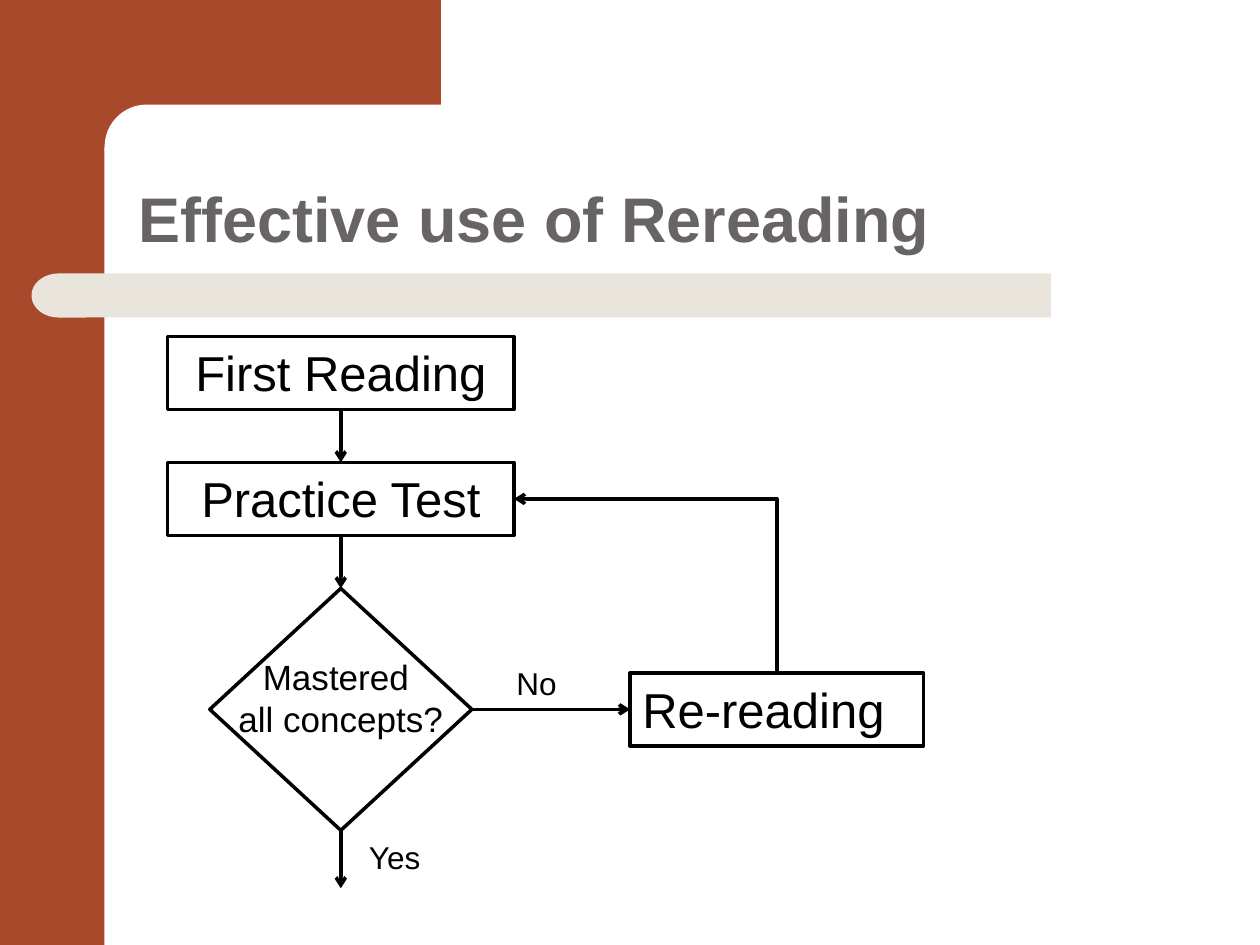
from lxml import etree
from pptx import Presentation
from pptx.dml.color import RGBColor
from pptx.enum.shapes import MSO_CONNECTOR as LINE, MSO_SHAPE as SHAPE
from pptx.enum.text import MSO_ANCHOR as ANCHOR, MSO_AUTO_SIZE as FIT, PP_ALIGN as ALIGN
from pptx.oxml.ns import qn
from pptx.util import Inches, Pt

COLORS = {"rust": "A8492B", "sand": "E9E5DC", "paper": "FFFFFF", "title": "696464", "ink": "000000"}
TOP, BOTTOM, LEFT, RIGHT = 0, 2, 1, 3


def color(name):
    """Return the named colour."""
    return RGBColor.from_string(COLORS[name])


def write(frame, text, size, ink="ink", bold=False, **paragraph_format):
    """Fill a text frame, one paragraph a line, in one format."""
    frame.text = text
    for paragraph in frame.paragraphs:
        for name, value in paragraph_format.items():
            setattr(paragraph, name, value)
        font = paragraph.font
        for name, value in {"name": "Arial", "size": Pt(size), "bold": bold}.items():
            setattr(font, name, value)
        font.color.rgb = color(ink)


def add_block(slide, kind, box, fill):
    """Add a plain filled shape without outline."""
    shape = slide.shapes.add_shape(kind, *map(Inches, box))
    shape.shadow.inherit = False
    shape.fill.solid()
    shape.fill.fore_color.rgb = color(fill)
    shape.line.fill.background()
    return shape


def add_backdrop(slide, width, height):
    """Place the rust corner frame and the sand bar."""
    band, corner = 0.83, 1.17
    add_block(slide, SHAPE.RECTANGLE, (0, 0, band, height), "rust")
    add_block(slide, SHAPE.RECTANGLE, (0.75, 0, 2.75, corner), "rust")
    curve = add_block(slide, SHAPE.ROUNDED_RECTANGLE, (band, band, 5.58, 0.67), "paper")
    curve.adjustments[0] = 0.5
    bar_top, bar_height, bar_left = 2.17, 0.35, 0.67
    add_block(slide, SHAPE.RECTANGLE, (bar_left, bar_top, width - 1.66 - bar_left, bar_height), "sand")
    cap = add_block(slide, SHAPE.FLOWCHART_DELAY, (0.25, bar_top, 0.43, bar_height), "sand")
    cap.rotation = 180


def add_title(slide, box, text):
    """Move the title placeholder into its box, above the backdrop."""
    title = slide.shapes.title
    title.left, title.top, title.width, title.height = map(Inches, box)
    frame = title.text_frame
    frame.vertical_anchor, frame.auto_size = ANCHOR.BOTTOM, FIT.NONE
    write(frame, text, 36, "title", True, alignment=ALIGN.LEFT, line_spacing=0.9)
    slide.shapes._spTree.append(title.element)


def add_step(slide, kind, box, text, size, **paragraph_format):
    """Add an outlined flowchart step with its text."""
    shape = slide.shapes.add_shape(kind, *map(Inches, box))
    shape.shadow.inherit = False
    shape.fill.background()
    shape.line.color.rgb = color("ink")
    shape.line.width = Pt(2)
    frame = shape.text_frame
    frame.word_wrap, frame.vertical_anchor = False, ANCHOR.TOP
    write(frame, text, size, **paragraph_format)
    return shape


def add_label(slide, box, text):
    """Add a branch label."""
    frame = slide.shapes.add_textbox(*map(Inches, box)).text_frame
    frame.word_wrap, frame.auto_size = False, FIT.SHAPE_TO_FIT_TEXT
    write(frame, text, 18)


def add_arrow(slide, start, end, kind=LINE.STRAIGHT):
    """Add a black connector with an open arrowhead at its end."""
    arrow = slide.shapes.add_connector(kind, *start, *end)
    arrow.line.color.rgb = color("ink")
    arrow.line.width = Pt(2)
    properties = arrow.element.spPr
    etree.SubElement(properties.find(qn("a:ln")), qn("a:tailEnd"), type="arrow")
    etree.SubElement(properties, qn("a:effectLst"))
    return arrow


def link(slide, source, source_site, target, target_site):
    """Join two steps with a straight glued arrow."""
    arrow = add_arrow(slide, (0, 0), (0, 0))
    arrow.begin_connect(source, source_site)
    arrow.end_connect(target, target_site)


def add_return_arrow(slide, source, target):
    """Run an arrow up from the top of one step and left into another."""
    start = source.left + source.width // 2, source.top
    end = target.left + target.width, target.top + target.height // 2
    arrow = add_arrow(slide, start, end, LINE.ELBOW)
    run, rise = start[0] - end[0], start[1] - end[1]
    place = {"left": (start[0] + end[0] - rise) // 2, "top": (start[1] + end[1] - run) // 2,
             "width": rise, "height": run}
    for name, value in place.items():
        setattr(arrow, name, value)
    properties = arrow.element.spPr
    properties.find(qn("a:prstGeom")).set("prst", "bentConnector2")
    frame = properties.find(qn("a:xfrm"))
    for name in ("flipH", "flipV"):
        frame.attrib.pop(name, None)
    frame.set("rot", str(270 * 60000))
    frame.set("flipV", "1")


def add_flowchart(slide, left, top):
    """Place the reading loop with its top left corner at the given point."""
    width, height, pitch = 2.75, 0.58, 1
    middle = left + width / 2
    centred = {"alignment": ALIGN.CENTER}
    spaced = {"space_before": Pt(3)}
    first, practice = [
        add_step(slide, SHAPE.RECTANGLE, (left, top + row * pitch, width, height),
                 text, 28, **centred, **spaced)
        for row, text in enumerate(("First Reading", "Practice Test"))]
    mastered = add_step(slide, SHAPE.DIAMOND, (middle - 1.04, top + 2 * pitch, 2.08, 1.92),
                        "Mastered \nall concepts?", 20, **centred)
    reread = add_step(slide, SHAPE.RECTANGLE, (left + 3.67, top + 2.67, 2.33, height),
                      "Re-reading", 28, alignment=ALIGN.LEFT, **spaced)
    link(slide, first, BOTTOM, practice, TOP)
    link(slide, practice, BOTTOM, mastered, TOP)
    link(slide, mastered, RIGHT, reread, LEFT)
    add_return_arrow(slide, reread, practice)
    exit_point = Inches(middle), mastered.top + mastered.height
    add_arrow(slide, exit_point, (exit_point[0], exit_point[1] + Inches(0.46)))
    add_label(slide, (left + 2.67, top + 2.55, 0.52, 0.4), "No")
    add_label(slide, (left + 1.5, top + 3.93, 0.61, 0.4), "Yes")


def main():
    """Build and save the slide."""
    presentation = Presentation()
    width, height = 10, 7.5
    presentation.slide_width, presentation.slide_height = Inches(width), Inches(height)
    slide = presentation.slides.add_slide(presentation.slide_layouts[5])
    add_backdrop(slide, width, height)
    add_title(slide, (1, 0.83, 8.75, 1.25), "Effective use of Rereading")
    add_flowchart(slide, 1.33, 2.67)
    presentation.save("out.pptx")


if __name__ == "__main__":
    main()
